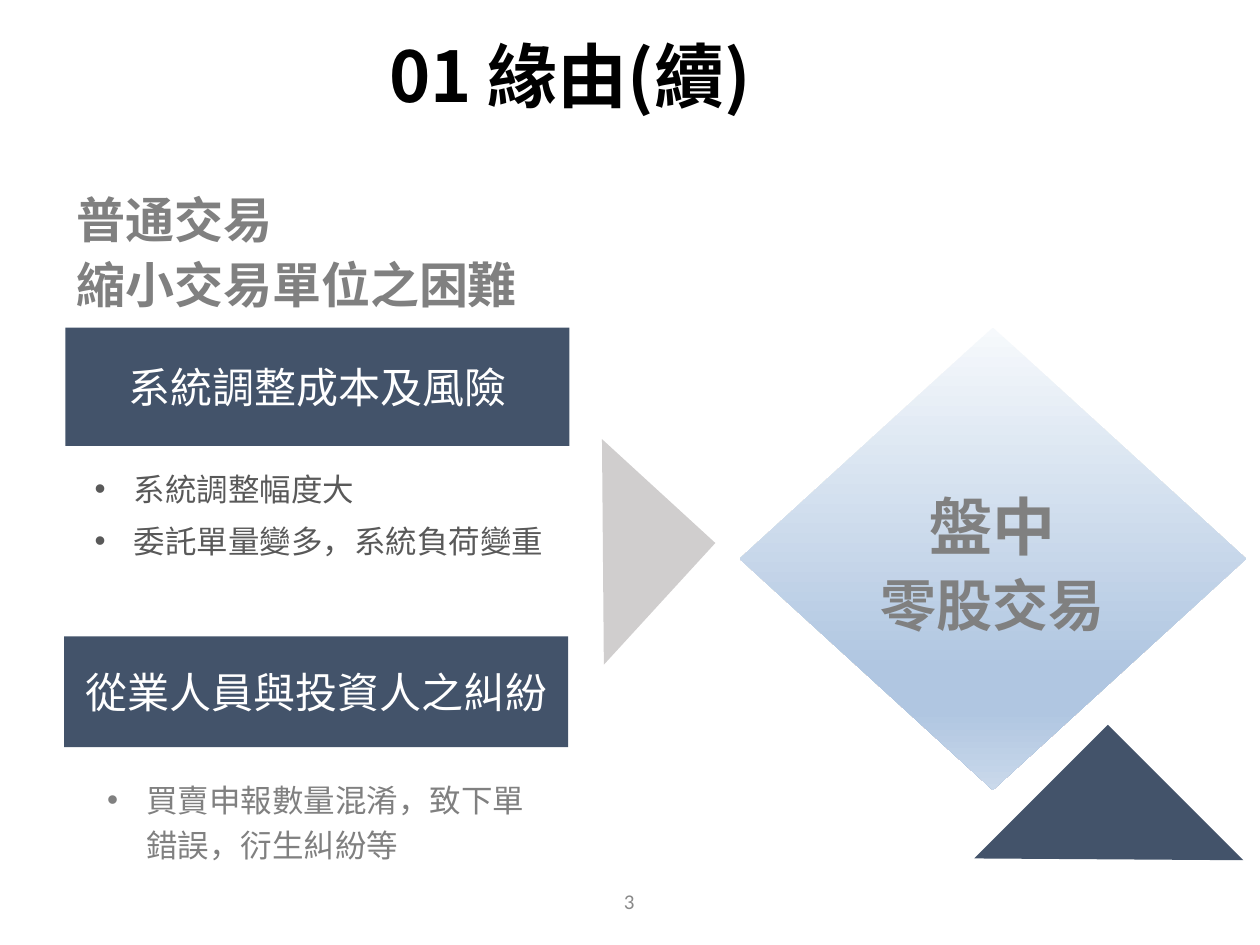
from lxml.etree import SubElement
from pptx import Presentation
from pptx.dml.color import RGBColor
from pptx.enum.shapes import MSO_SHAPE as Shape
from pptx.enum.text import MSO_ANCHOR as Anchor, MSO_AUTO_SIZE as AutoSize, PP_ALIGN as Align
from pptx.oxml.ns import qn
from pptx.util import Inches, Pt

NAVY = RGBColor(0x43, 0x53, 0x6A)
SILVER = RGBColor(0xD0, 0xCE, 0xCE)
GRAY = RGBColor(0x80, 0x80, 0x80)
DARK_GRAY = RGBColor(0x59, 0x59, 0x59)
PAGE_GRAY = RGBColor(0x89, 0x89, 0x89)
WHITE = RGBColor(0xFF, 0xFF, 0xFF)
BLACK = RGBColor(0, 0, 0)
DIAMOND_STOPS = [(0, "F6F9FC"), (74, "B0C6E1"), (83, "B0C6E1"), (100, "CAD9EB")]
CJK_FONT = "Noto Sans CJK SC"

presentation = Presentation()
presentation.slide_width, presentation.slide_height = Inches(10), Inches(7.5)
COLUMN = presentation.slide_width // 100
ROW = presentation.slide_height // 75
slide = presentation.slides.add_slide(presentation.slide_layouts[3])
shapes = slide.shapes


def area(left, top, width, height):
    """Turn grid columns and rows into slide lengths."""
    return int(left * COLUMN), int(top * ROW), int(width * COLUMN), int(height * ROW)


def write(shape, lines, sizes, color, align=Align.LEFT, anchor=Anchor.MIDDLE,
          bold=False, spacing=1.0, bullet=False, font_name=CJK_FONT):
    frame = shape.text_frame
    frame.word_wrap = True
    frame.auto_size = AutoSize.NONE
    frame.vertical_anchor = anchor
    frame.text = "\n".join(lines)
    for paragraph, size in zip(frame.paragraphs, sizes):
        paragraph.alignment = align
        paragraph.line_spacing = spacing
        properties = paragraph._p.get_or_add_pPr()
        if bullet:
            properties.set("marL", str(Inches(0.31)))
            properties.set("indent", str(-Inches(0.31)))
            SubElement(properties, qn("a:buFont"), typeface="Arial")
            SubElement(properties, qn("a:buChar"), char="•")
        font = paragraph.font
        font.size, font.bold, font.name = Pt(size), bold, font_name
        font.color.rgb = color
        SubElement(properties.find(qn("a:defRPr")), qn("a:ea"), typeface=font_name)


# Title
title = shapes.title
title.left, title.top, title.width, title.height = area(16.1, 2.1, 58.3, 7.7)
write(title, ["01 緣由(續)"], [40], BLACK, Align.CENTER, Anchor.TOP, bold=True)

# Conclusion diamond
diamond = shapes.add_shape(Shape.DIAMOND, *area(58.7, 26, 40.2, 36.7))
diamond.shadow.inherit = False
diamond.line.fill.background()
diamond.fill.gradient()
diamond.fill.gradient_angle = 270
stop_list = diamond._element.spPr.find(qn("a:gradFill")).find(qn("a:gsLst"))
for stop in list(stop_list):
    stop_list.remove(stop)
for percent, color in DIAMOND_STOPS:
    stop = SubElement(stop_list, qn("a:gs"), pos=str(percent * 1000))
    SubElement(stop, qn("a:srgbClr"), val=color)
write(diamond, ["盤中", "零股交易"], [36, 32], GRAY, Align.CENTER, bold=True, spacing=1.1)

# Corner triangle and the triangle pointing at the diamond
for place, rotation, color, flipped in [
    ((80.5, 60.6, 15, 15.2), 135, NAVY, False),
    ((41.3, 37.7, 13.1, 12.2), 132.5, SILVER, True),
]:
    triangle = shapes.add_shape(Shape.RIGHT_TRIANGLE, *area(*place))
    triangle.shadow.inherit = False
    triangle.fill.solid()
    triangle.fill.fore_color.rgb = color
    triangle.line.fill.background()
    triangle.rotation = rotation
    if flipped:
        triangle._element.spPr.xfrm.set("flipV", "1")

# Heading of the left column
heading = shapes.add_textbox(*area(5.1, 14.2, 45.4, 11))
write(heading, ["普通交易", "縮小交易單位之困難"], [28, 28], GRAY, bold=True, spacing=1.1)

# Two difficulties, each a banner with a list below
for banner_place, banner_text, index, list_place, items, color in [
    ((5.2, 26, 40, 9.4), "系統調整成本及風險", 1, (6.3, 36.1, 39.1, 9.4),
     ["系統調整幅度大", "委託單量變多，系統負荷變重"], DARK_GRAY),
    ((5.1, 50.5, 40, 8.8), "從業人員與投資人之糾紛", 2, (7.3, 60.8, 35.7, 8.8),
     ["買賣申報數量混淆，致下單錯誤，衍生糾紛等"], GRAY),
]:
    banner = shapes.add_shape(Shape.RECTANGLE, *area(*banner_place))
    banner.shadow.inherit = False
    banner.fill.solid()
    banner.fill.fore_color.rgb = NAVY
    banner.line.fill.background()
    write(banner, [banner_text], [24], WHITE, Align.CENTER)

    body = slide.placeholders[index]
    body.left, body.top, body.width, body.height = area(*list_place)
    frame = body.text_frame
    frame.margin_left = frame.margin_right = Inches(0.12)
    frame.margin_top = frame.margin_bottom = Inches(0.06)
    write(body, items, [18] * len(items), color, anchor=Anchor.TOP, spacing=1.2, bullet=True)
    frame.paragraphs[0].space_before = Pt(0)

# Page number
page_number = shapes.add_textbox(*area(38.3, 69.5, 23.3, 4))
write(page_number, ["3"], [12], PAGE_GRAY, Align.CENTER, font_name="Calibri")

presentation.save("out.pptx")
